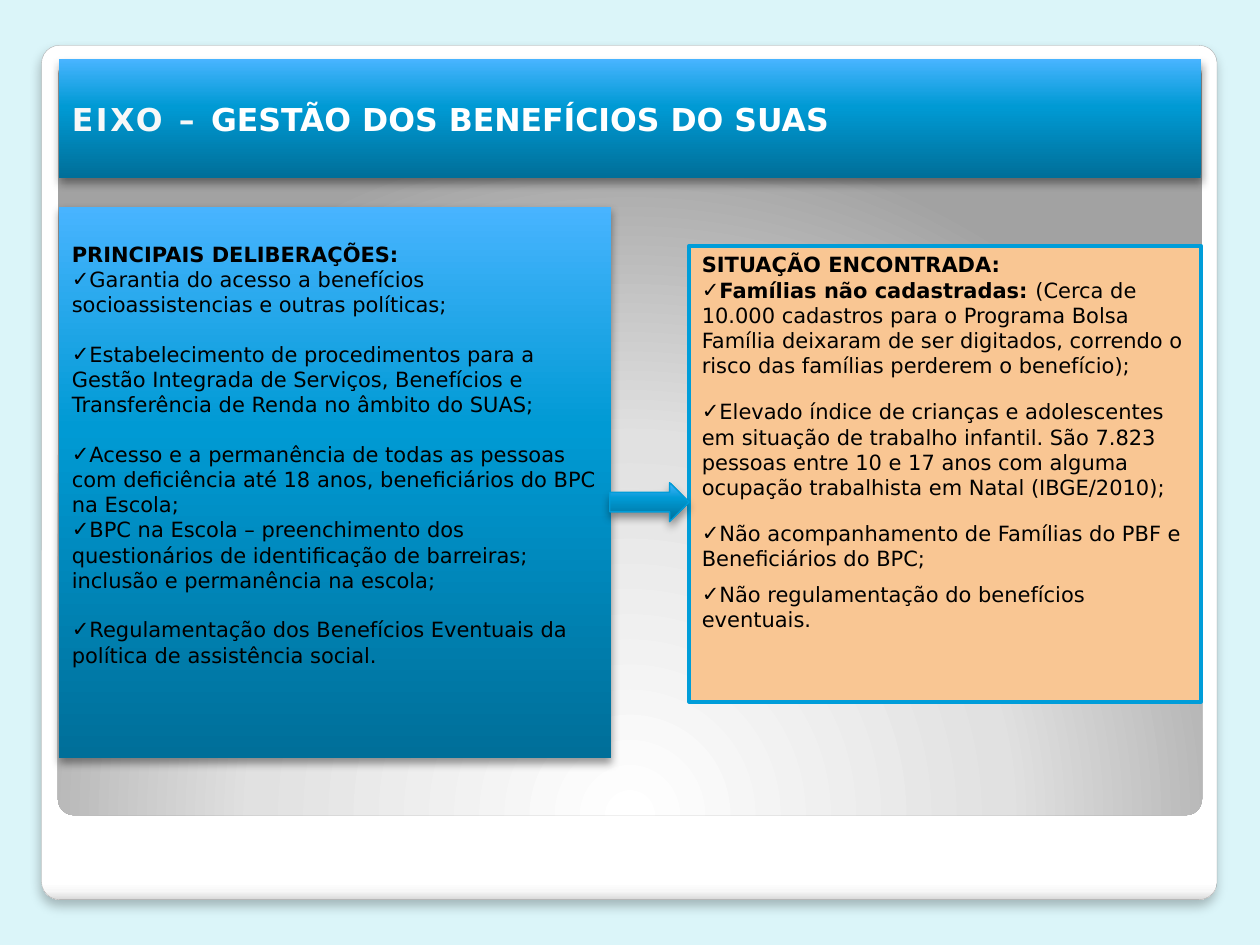
from lxml import etree
from pptx import Presentation
from pptx.dml.color import RGBColor
from pptx.enum.shapes import MSO_SHAPE
from pptx.enum.text import MSO_ANCHOR, MSO_AUTO_SIZE, PP_ALIGN
from pptx.oxml.ns import qn
from pptx.util import Inches, Pt

ROUNDED, ARROW = MSO_SHAPE.ROUNDED_RECTANGLE, MSO_SHAPE.RIGHT_ARROW
TOP, MIDDLE = MSO_ANCHOR.TOP, MSO_ANCHOR.MIDDLE
LEFT, NO_FIT = PP_ALIGN.LEFT, MSO_AUTO_SIZE.NONE
FONT = "DejaVu Sans"
BLUE = [(0, "006F99"), (60, "009AD4"), (100, "48B4FF")]
BLUE_SHADOW = (40, 5.2, 3)
hex_color = RGBColor.from_string

deck = Presentation()
deck.slide_width, deck.slide_height = Inches(10), Inches(7.5)
page = deck.slides.add_slide(deck.slide_layouts.get_by_name("Two Content"))
page.background.fill.solid()
page.background.fill.fore_color.rgb = hex_color("DBF5F9")


def area(left, top, width, height):
    """Turn percentages of the slide's size into lengths."""
    across, down = deck.slide_width / 100, deck.slide_height / 100
    return [round(share * unit) for share, unit in
            zip((left, top, width, height), (across, down, across, down))]


def shade(box, stops, angle=None, focus=None, shadow=None):
    """Gradient along an angle or round a focus; shadow is opacity %, blur, distance."""
    box.fill.gradient()
    gradient = box.element.spPr.find(qn("a:gradFill"))
    for child in list(gradient):
        gradient.remove(child)
    stop_list = etree.SubElement(gradient, qn("a:gsLst"))
    for position, color in stops:
        stop = etree.SubElement(stop_list, qn("a:gs"), pos=str(position * 1000))
        etree.SubElement(stop, qn("a:srgbClr"), val=color)
    if focus:
        circle = etree.SubElement(gradient, qn("a:path"), path="circle")
        sides = {side: str(share * 1000) for side, share in zip("ltrb", focus)}
        etree.SubElement(circle, qn("a:fillToRect"), **sides)
    else:
        etree.SubElement(gradient, qn("a:lin"), ang=str(angle * 60000), scaled="0")
    box.line.fill.background()
    box.shadow.inherit = False
    if shadow:
        opacity, blur, distance = shadow
        effects = box.element.spPr.find(qn("a:effectLst"))
        outer = etree.SubElement(effects, qn("a:outerShdw"), blurRad=str(Pt(blur)),
                                 dist=str(Pt(distance)), dir="5400000", rotWithShape="0")
        color = etree.SubElement(outer, qn("a:srgbClr"), val="000000")
        etree.SubElement(color, qn("a:alpha"), val=str(opacity * 1000))


# White card with a grey panel inside it
card = page.shapes.add_shape(ROUNDED, *area(3.3, 4.8, 93.3, 90.4))
shade(card, [(0, "FFFFFF"), (98, "FFFFFF"), (99, "F7F7F7"), (100, "DADADA")],
      angle=90, shadow=(25, 6, 4))
card.line.color.rgb = hex_color("A4A4A4")
card.line.width = Pt(0.16)
panel = page.shapes.add_shape(ROUNDED, *area(4.6, 6.27, 90.8, 80))
shade(panel, [(0, "FFFFFF"), (55, "E1E1E1"), (100, "A2A2A2")], focus=(50, 175, 50, -75))
card.adjustments[0] = panel.adjustments[0] = 0.021

title, decisions, findings = page.placeholders
for box, place, anchor in [
    (title, area(4.7, 6.27, 90.6, 12.53), MIDDLE),
    (findings, area(54.7, 26, 40.6, 48.27), TOP),
    (decisions, area(4.7, 21.87, 43.8, 58.4), MIDDLE),
]:
    page.shapes.element.append(box.element)  # in front of the card
    box.left, box.top, box.width, box.height = place
    frame = box.text_frame
    frame.word_wrap = True
    frame.auto_size = NO_FIT
    frame.vertical_anchor = anchor
shade(title, BLUE, angle=270, shadow=BLUE_SHADOW)
shade(decisions, BLUE, angle=270, shadow=BLUE_SHADOW)
decisions.text_frame.margin_bottom = Inches(0.5)
findings.fill.solid()
findings.fill.fore_color.rgb = hex_color("F9C693")
findings.line.color.rgb = hex_color("009DD9")
findings.line.width = Pt(2.25)

para = title.text_frame.paragraphs[0]
para.alignment = LEFT
for text, color, spacing in [("EIXO – ", "F8F8F8", 150),
                             ("GESTÃO DOS BENEFÍCIOS DO SUAS", "FFFFFF", 0)]:
    span = para.add_run()
    span.text = text
    span.font.name, span.font.size, span.font.bold = FONT, Pt(18), True
    span.font.color.rgb = hex_color(color)
    span.font._element.set("spc", str(spacing))

# Each item: space before, bold part, regular part
decision_items = [
    (0, "PRINCIPAIS DELIBERAÇÕES:", ""),
    (0, "", "Garantia do acesso a benefícios socioassistencias e outras políticas;"),
    (14, "", "Estabelecimento de procedimentos para a Gestão Integrada de Serviços, "
             "Benefícios e Transferência de Renda no âmbito do SUAS;"),
    (14, "", "Acesso e a permanência de todas as pessoas com deficiência até 18 anos, "
             "beneficiários do BPC na Escola;"),
    (0, "", "BPC na Escola – preenchimento dos questionários de identificação de "
            "barreiras; inclusão e permanência na escola;"),
    (14, "", "Regulamentação dos Benefícios Eventuais da política de assistência social."),
]
finding_items = [
    (0, "SITUAÇÃO ENCONTRADA:", ""),
    (0, "Famílias não cadastradas: ",
     "(Cerca de 10.000 cadastros para o Programa Bolsa Família deixaram de ser "
     "digitados, correndo o risco das famílias perderem o benefício);"),
    (12, "", "Elevado índice de crianças e adolescentes em situação de trabalho infantil. "
             "São 7.823 pessoas entre 10 e 17 anos com alguma ocupação trabalhista em "
             "Natal (IBGE/2010);"),
    (12, "", "Não acompanhamento de Famílias do PBF e Beneficiários do BPC;"),
    (6, "", "Não regulamentação do benefícios eventuais."),
]
for box, items in [(decisions, decision_items), (findings, finding_items)]:
    frame = box.text_frame
    for number, (gap, strong, plain) in enumerate(items):
        para = frame.add_paragraph() if number else frame.paragraphs[0]
        para.alignment = LEFT
        para.space_before = Pt(gap)
        properties = para._p.get_or_add_pPr()
        properties.set("marL", "0")
        properties.set("indent", "0")
        if number:
            etree.SubElement(properties, qn("a:buChar"), char="✓")
        else:
            etree.SubElement(properties, qn("a:buNone"))
        for text, bold in [(strong, True), (plain, False)]:
            if text:
                span = para.add_run()
                span.text = text
                span.font.name, span.font.size, span.font.bold = FONT, Pt(12), bold
                span.font.color.rgb = hex_color("000000")

arrow = page.shapes.add_shape(ARROW, *area(48.4, 51.07, 6.3, 4.13))
shade(arrow, BLUE, angle=270, shadow=BLUE_SHADOW)
arrow.line.color.rgb = hex_color("009DD9")
arrow.line.width = Pt(0.75)

deck.save("out.pptx")
